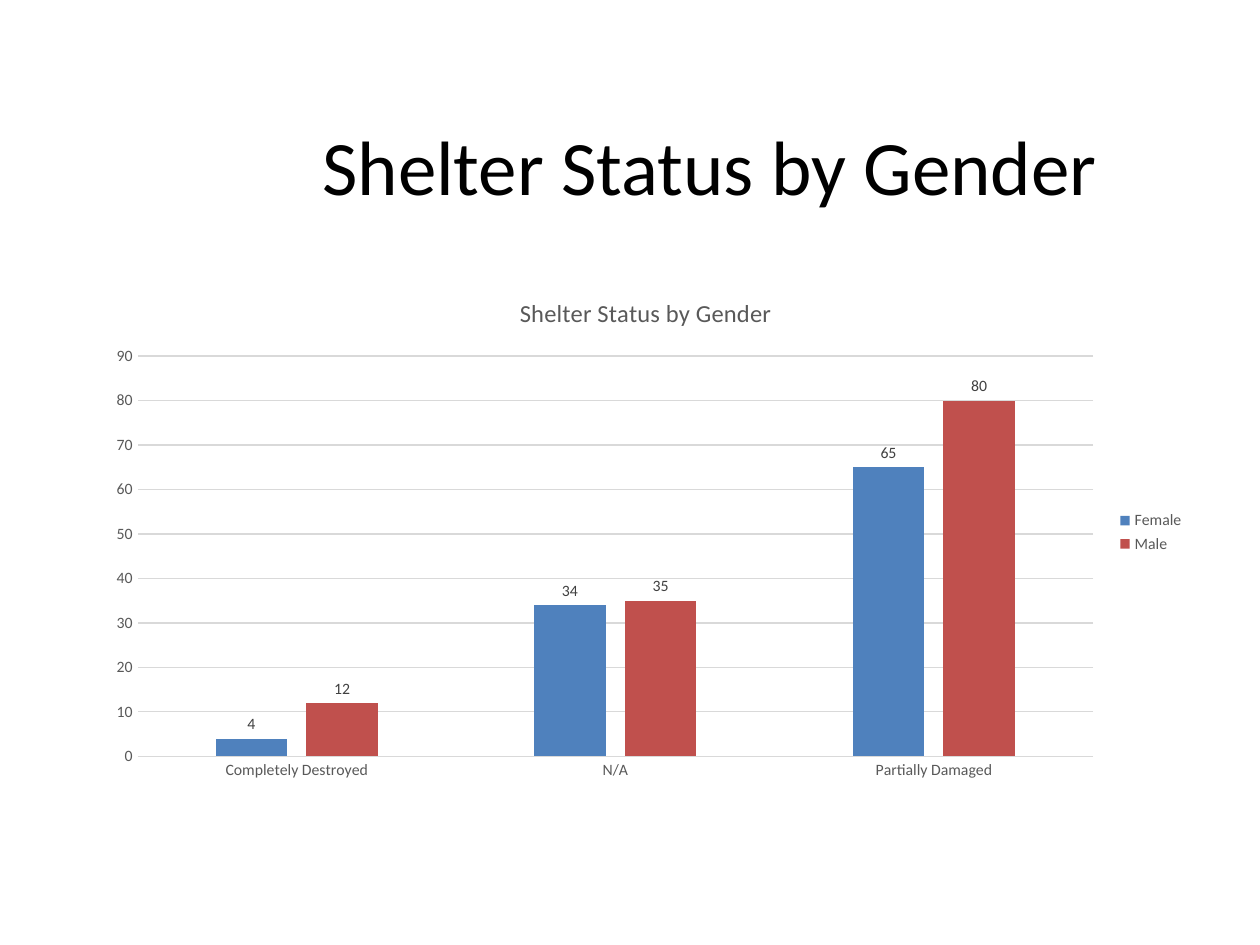
from pptx import Presentation
from pptx.chart.data import CategoryChartData
from pptx.dml.color import RGBColor
from pptx.enum.chart import XL_CHART_TYPE, XL_LABEL_POSITION, XL_LEGEND_POSITION, XL_TICK_MARK
from pptx.enum.text import MSO_ANCHOR, PP_ALIGN
from pptx.util import Inches, Pt

HEADING = "Shelter Status by Gender"
STATUSES = ["Completely Destroyed", "N/A", "Partially Damaged"]
GENDERS = [("Female", (4, 34, 65), "4F81BD"), ("Male", (12, 35, 80), "C0504D")]
GREY, PALE, DARK = "595959", "D9D9D9", "404040"


def color(hex_value):
    return RGBColor.from_string(hex_value)


def style_font(font, size, hex_value):
    font.name = "Calibri"
    font.size = Pt(size)
    font.bold = False
    font.color.rgb = color(hex_value)


def style_line(line):
    line.color.rgb = color(PALE)
    line.width = Pt(0.75)


def place_title(title, box):
    title.left, title.top, title.width, title.height = box
    frame = title.text_frame
    frame.word_wrap = True
    frame.vertical_anchor = MSO_ANCHOR.MIDDLE
    paragraph = frame.paragraphs[0]
    paragraph.alignment = PP_ALIGN.CENTER
    run = paragraph.add_run()
    run.text = HEADING
    style_font(run.font, 44, "000000")


def style_axes(chart):
    statuses, counts = chart.category_axis, chart.value_axis
    for axis in (statuses, counts):
        axis.major_tick_mark = axis.minor_tick_mark = XL_TICK_MARK.NONE
        style_font(axis.tick_labels.font, 9, GREY)
    style_line(statuses.format.line)
    counts.format.line.fill.background()
    counts.minimum_scale, counts.maximum_scale, counts.major_unit = 0, 90, 10
    counts.has_major_gridlines = True
    style_line(counts.major_gridlines.format.line)


def style_columns(plot):
    plot.gap_width, plot.overlap = 219, -27
    plot.vary_by_categories = False
    for series, (_, _, fill) in zip(plot.series, GENDERS):
        series.format.fill.solid()
        series.format.fill.fore_color.rgb = color(fill)
        series.invert_if_negative = False
        labels = series.data_labels
        labels.show_value = True
        labels.position = XL_LABEL_POSITION.OUTSIDE_END
        style_font(labels.font, 9, DARK)


def place_chart(slide, box):
    shelter_data = CategoryChartData()
    shelter_data.categories = STATUSES
    for gender, counts, _ in GENDERS:
        shelter_data.add_series(gender, counts)
    chart = slide.shapes.add_chart(XL_CHART_TYPE.COLUMN_CLUSTERED, *box, shelter_data).chart
    style_font(chart.font, 10, "000000")

    chart.has_title = True
    run = chart.chart_title.text_frame.paragraphs[0].add_run()
    run.text = HEADING
    style_font(run.font, 14, GREY)
    chart.chart_title.include_in_layout = False

    chart.has_legend = True
    chart.legend.position = XL_LEGEND_POSITION.RIGHT
    chart.legend.include_in_layout = False
    style_font(chart.legend.font, 9, GREY)

    style_axes(chart)
    style_columns(chart.plots[0])


def main():
    deck = Presentation()
    deck.slide_width, deck.slide_height = Inches(10), Inches(7.5)
    slide = deck.slides.add_slide(deck.slide_layouts[5])
    right = Inches(9.5)
    title_left, chart_left = Inches(1.77), Inches(0.75)
    place_title(slide.shapes.title, (title_left, Inches(0.68), right - title_left, Inches(1.25)))
    place_chart(slide, (chart_left, Inches(2.18), right - chart_left, Inches(4.09)))
    deck.save("out.pptx")


if __name__ == "__main__":
    main()
